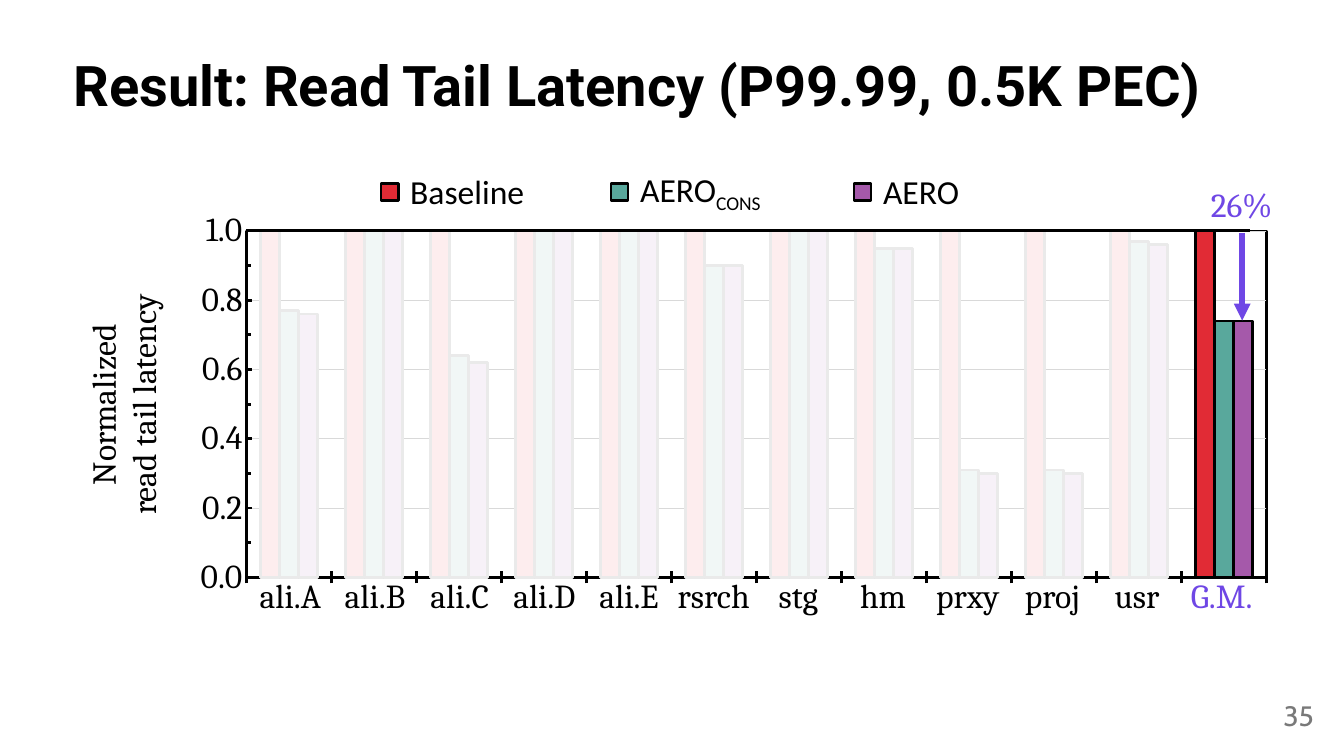
from dataclasses import dataclass

from lxml import etree
from pptx import Presentation
from pptx.chart.data import CategoryChartData
from pptx.dml.color import RGBColor
from pptx.enum.chart import XL_CHART_TYPE, XL_TICK_LABEL_POSITION, XL_TICK_MARK
from pptx.enum.shapes import MSO_CONNECTOR, MSO_SHAPE
from pptx.enum.text import MSO_ANCHOR, MSO_AUTO_SIZE, PP_ALIGN
from pptx.oxml import parse_xml
from pptx.oxml.ns import nsdecls, qn
from pptx.util import Pt

PX = 9144  # 100 px to the inch
COLUMNS = XL_CHART_TYPE.COLUMN_CLUSTERED
NO_LABELS = XL_TICK_LABEL_POSITION.NONE
TICK_CROSS, TICK_IN = XL_TICK_MARK.CROSS, XL_TICK_MARK.INSIDE
STRAIGHT, RECT = MSO_CONNECTOR.STRAIGHT, MSO_SHAPE.RECTANGLE
TOP, MIDDLE = MSO_ANCHOR.TOP, MSO_ANCHOR.MIDDLE
LEFT, CENTER, RIGHT = PP_ALIGN.LEFT, PP_ALIGN.CENTER, PP_ALIGN.RIGHT
GROW = MSO_AUTO_SIZE.SHAPE_TO_FIT_TEXT
PLAIN_TABLE = "{2D5ABB26-0587-4C30-8999-92F81FD0307C}"


@dataclass(frozen=True)
class Theme:
    ink: str = "000000"
    accent: str = "6F47E5"
    grid: str = "D9D9D9"
    faded_line: str = "EAEAEA"
    page: str = "797979"
    strong: tuple = ("E12B35", "59A89C", "A559AA")
    faded: tuple = ("FDEDEE", "F1F7F6", "F7F1F8")
    title_font: str = "Roboto"
    chart_font: str = "Cambria"
    legend_font: str = "Calibri"
    page_font: str = "Cabin"
    title_size: int = 40
    label_size: int = 24
    page_size: int = 20
    outline: float = 2
    grid_line: float = 0.5
    arrow_line: float = 4


def px(*lengths):
    return [length * PX for length in lengths]


def rgb(colour):
    return RGBColor.from_string(colour)


class SlideBuilder:
    def __init__(self, slide, theme):
        self.slide = slide
        self.theme = theme

    def run(self, paragraph, text, font, size, colour, bold=False, baseline=None):
        run = paragraph.add_run()
        run.text = text
        run.font.name, run.font.size, run.font.bold = font, Pt(size), bold
        run.font.color.rgb = rgb(colour)
        if baseline:
            run.font._element.set("baseline", str(baseline))

    def line(self, line, colour, width):
        line.color.rgb = rgb(colour)
        line.width = Pt(width)

    def title(self, text, box):
        title = self.slide.shapes.title
        title.left, title.top, title.width, title.height = px(*box)
        title.text_frame.vertical_anchor = MIDDLE
        paragraph = title.text_frame.paragraphs[0]
        paragraph.alignment, paragraph.line_spacing = LEFT, 0.9
        self.run(paragraph, text, self.theme.title_font, self.theme.title_size,
                 self.theme.ink, bold=True)

    def text(self, lines, box, font, size, colour, align=CENTER, anchor=MIDDLE,
             wrap=True, grow=True, inset=None, rotation=0, parent=None):
        """Each line is a list of (text, baseline) runs."""
        shape = (parent or self.slide).shapes.add_textbox(*px(*box))
        shape.rotation = rotation
        frame = shape.text_frame
        frame.word_wrap, frame.vertical_anchor = wrap, anchor
        if grow:
            frame.auto_size = GROW
        if inset is not None:
            frame.margin_left = frame.margin_right = inset
            frame.margin_top = frame.margin_bottom = inset
        for index, runs in enumerate(lines):
            paragraph = frame.add_paragraph() if index else frame.paragraphs[0]
            paragraph.alignment = align
            for words, baseline in runs:
                self.run(paragraph, words, font, size, colour, baseline=baseline)

    def legend_entry(self, runs, left, width, colour):
        entry = self.slide.shapes.add_group_shape()
        swatch = entry.shapes.add_shape(RECT, *px(left, 182, 17, 17))
        swatch.shadow.inherit = False
        swatch.fill.solid()
        swatch.fill.fore_color.rgb = rgb(colour)
        self.line(swatch.line, self.theme.ink, self.theme.outline)
        self.text([runs], (left + 19, 165, width, 50), self.theme.legend_font,
                  self.theme.label_size, self.theme.ink, align=LEFT, wrap=False,
                  parent=entry)

    def connector(self, start, end, colour, width, arrow=False):
        connector = self.slide.shapes.add_connector(STRAIGHT, *px(*start, *end))
        self.line(connector.line, colour, width)
        if arrow:
            etree.SubElement(connector.line._get_or_add_ln(), qn("a:tailEnd"), type="triangle")
        etree.SubElement(connector._element.spPr, qn("a:effectLst"))

    def chart(self, latency, box, plot_box):
        theme = self.theme
        data = CategoryChartData()
        count = len(latency[0])
        data.categories = [str(number) for number in range(1, count + 1)]
        for number, values in enumerate(latency, 1):
            data.add_series(f"Series {number}", values)
        chart = self.slide.shapes.add_chart(COLUMNS, *px(*box), data).chart
        chart.has_legend = chart.has_title = False
        chart.font.name, chart.font.size = theme.chart_font, Pt(theme.label_size)
        chart.font.color.rgb = rgb(theme.ink)

        # Bars: every workload faded, the mean in full colour
        plot = chart.plots[0]
        plot.gap_width, plot.overlap, plot.vary_by_categories = 150, 0, False
        for series, faded, strong in zip(plot.series, theme.faded, theme.strong):
            series.invert_if_negative = False
            mean = series.points[count - 1]
            for bar, fill, edge in ((series, faded, theme.faded_line),
                                    (mean, strong, theme.ink)):
                bar.format.fill.solid()
                bar.format.fill.fore_color.rgb = rgb(fill)
                self.line(bar.format.line, edge, theme.outline)

        # Axes
        workloads, scale = chart.category_axis, chart.value_axis
        workloads.tick_label_position = NO_LABELS
        workloads.major_tick_mark = TICK_CROSS
        scale.major_tick_mark = scale.minor_tick_mark = TICK_IN
        scale.minimum_scale, scale.maximum_scale = 0, 1
        scale.major_unit, scale.minor_unit = 0.2, 0.1
        scale.tick_labels.number_format = "#,##0.0"
        scale.tick_labels.number_format_is_linked = False
        for axis in (workloads, scale):
            self.line(axis.format.line, theme.ink, theme.outline)
        self.line(scale.major_gridlines.format.line, theme.grid, theme.grid_line)

        # Inner plot position and frame
        area = chart._chartSpace.chart.plotArea
        for old in area.findall(qn("c:layout")):
            area.remove(old)
        sizes = "".join(f'<c:{tag} val="{part}"/>' for tag, part in zip("xywh", plot_box))
        area.insert(0, parse_xml(
            f'<c:layout {nsdecls("c")}><c:manualLayout><c:layoutTarget val="inner"/>'
            f'<c:xMode val="edge"/><c:yMode val="edge"/>{sizes}</c:manualLayout></c:layout>'))
        area.append(parse_xml(
            f'<c:spPr {nsdecls("c", "a")}><a:noFill/><a:ln w="{Pt(theme.outline)}"><a:solidFill>'
            f'<a:srgbClr val="{theme.ink}"/></a:solidFill></a:ln></c:spPr>'))

    def label_row(self, labels, left, top, column, height):
        box = px(left, top, column * len(labels), height)
        table = self.slide.shapes.add_table(1, len(labels), *box).table
        table.first_row = table.horz_banding = False
        table._tbl.tblPr.find(qn("a:tableStyleId")).text = PLAIN_TABLE
        for index, label in enumerate(labels):
            table.columns[index].width = column * PX
            cell = table.cell(0, index)
            cell.fill.background()
            cell.margin_left = cell.margin_right = cell.margin_top = cell.margin_bottom = 0
            paragraph = cell.text_frame.paragraphs[0]
            paragraph.alignment = CENTER
            colour = self.theme.accent if label == labels[-1] else self.theme.ink
            self.run(paragraph, label, self.theme.chart_font, self.theme.label_size, colour)


def main():
    theme = Theme()
    deck = Presentation()
    deck.slide_width, deck.slide_height = px(1333, 750)
    page = SlideBuilder(deck.slides.add_slide(deck.slide_layouts[5]), theme)
    page.title("Result: Read Tail Latency (P99.99, 0.5K PEC)", (63, 15, 1208, 145))

    # Latency chart with its axis title and workload names
    baseline = [1] * 12
    aero_cons = [0.77, 1, 0.64, 1, 1, 0.9, 1, 0.95, 0.31, 0.31, 0.97, 0.74]
    aero = [0.76, 1, 0.62, 1, 1, 0.9, 1, 0.95, 0.3, 0.3, 0.96, 0.74]
    page.chart([baseline, aero_cons, aero], (19, 149, 1349, 572), (0.167, 0.14, 0.75, 0.601))
    page.text([[("Normalized", None)], [("read tail latency", None)]], (-49, 361, 342, 81),
              theme.chart_font, theme.label_size, theme.ink, anchor=TOP, inset=0, rotation=270)
    workloads = ["ali.A", "ali.B", "ali.C", "ali.D", "ali.E", "rsrch",
                 "stg", "hm", "prxy", "proj", "usr", "G.M."]
    page.label_row(workloads, 246, 574, 84, 41)

    # Reduction callout
    page.text([[("26%", None)]], (1188, 177, 87, 50), theme.chart_font, theme.label_size,
              theme.accent, wrap=False)
    page.connector((1232, 231), (1232, 318), theme.accent, theme.arrow_line, arrow=True)

    # Legend
    entries = [([("Baseline", None)], 378, 134),
               ([("AERO", None), ("CONS", -25000)], 606, 148),
               ([("AERO", None)], 847, 96)]
    for (runs, left, width), colour in zip(entries, theme.strong):
        page.legend_entry(runs, left, width, colour)

    # Top edge of the plot and page number
    page.connector((246, 229), (1240, 229), theme.ink, theme.outline)
    page.text([[("35", None)]], (1013, 690, 300, 40), theme.page_font, theme.page_size,
              theme.page, align=RIGHT, grow=False)
    deck.save("out.pptx")


if __name__ == "__main__":
    main()
